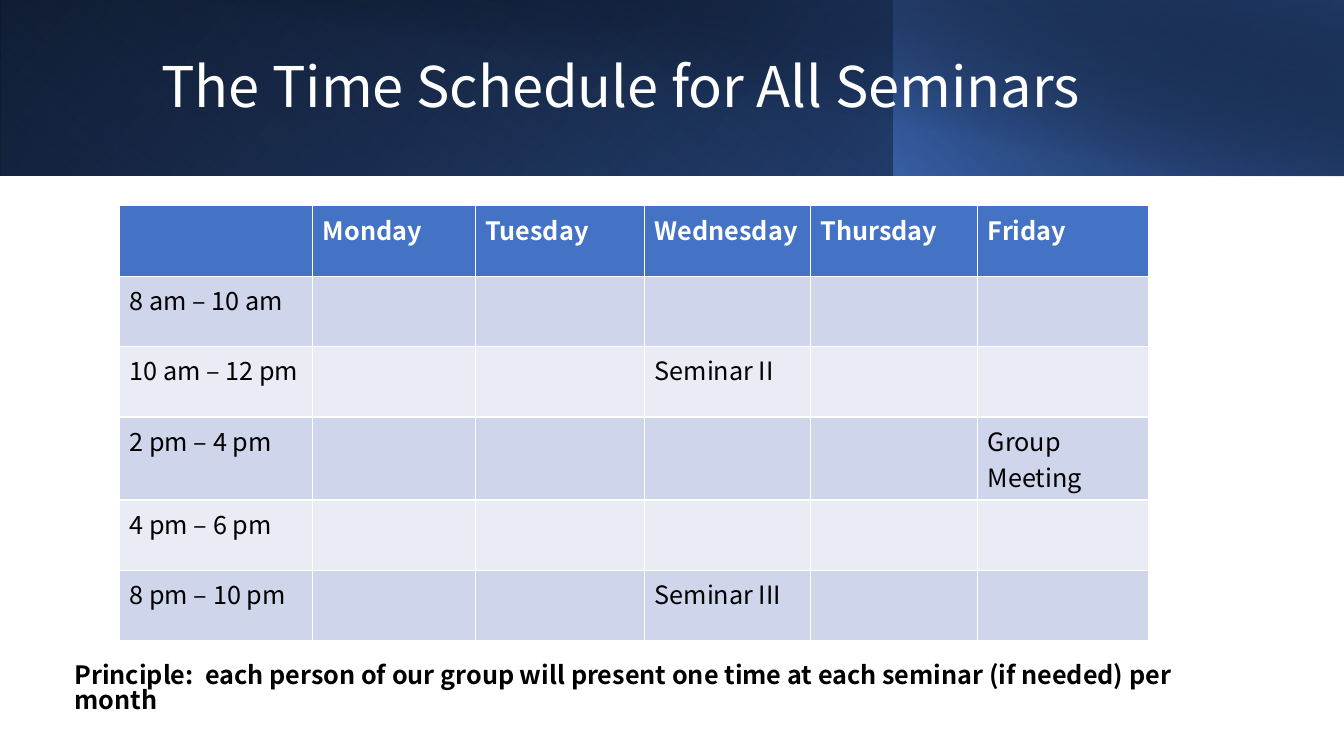
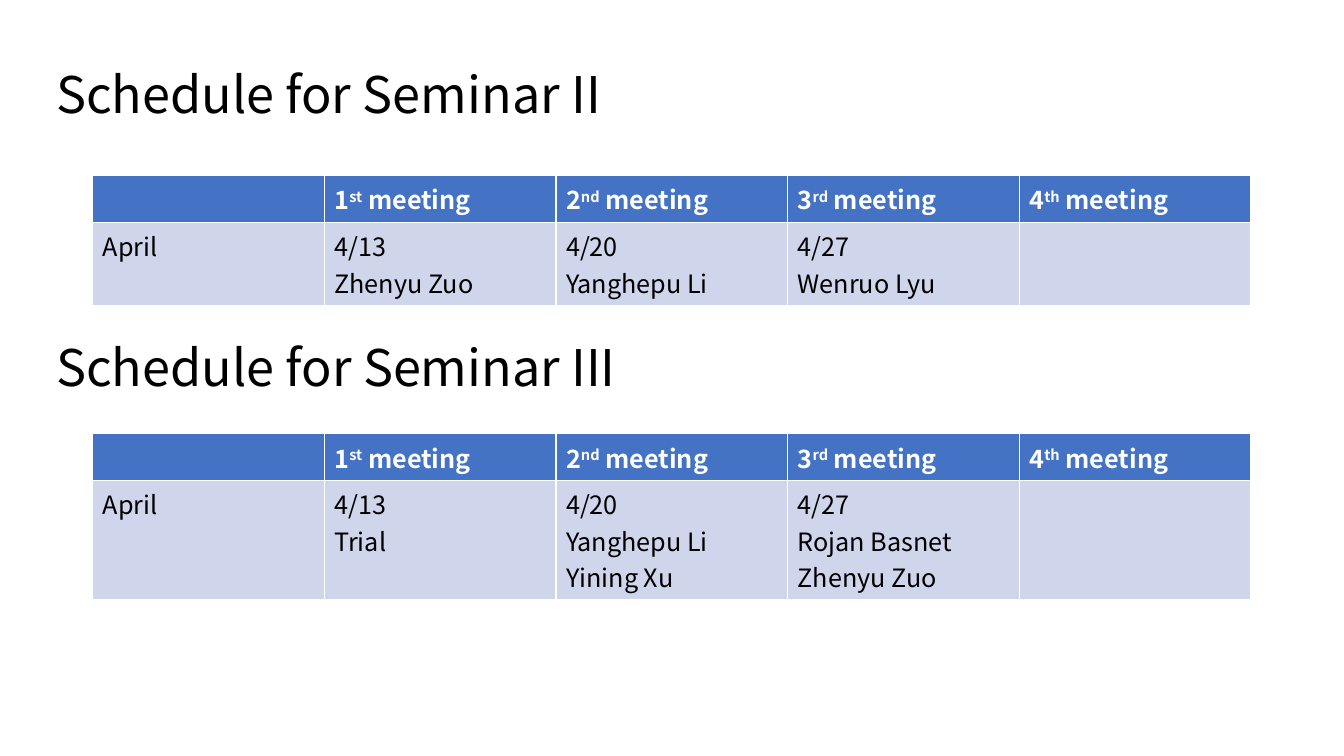
from dataclasses import dataclass
from typing import NamedTuple

from lxml.etree import SubElement
from pptx import Presentation
from pptx.dml.color import RGBColor
from pptx.enum.shapes import MSO_SHAPE
from pptx.enum.text import MSO_ANCHOR, MSO_AUTO_SIZE, PP_ALIGN
from pptx.oxml.ns import qn
from pptx.shapes.base import BaseShape
from pptx.slide import Slide
from pptx.text.text import _Paragraph
from pptx.util import Pt


# Theme: colours, font and type sizes
@dataclass(frozen=True)
class Theme:
    font: str = "Noto Sans CJK SC"
    white: str = "FFFFFF"
    black: str = "000000"
    accent: str = "4472C4"
    accent_dark: str = "2F5597"
    navy: str = "203864"
    band_odd: str = "CFD5EA"
    band_even: str = "E9EBF5"
    title: float = 40
    heading: float = 36
    text: float = 18
    title_spacing: float = 0.9
    note_spacing: float = 0.82


THEME = Theme()
TITLE_ONLY = 5


class Box(NamedTuple):
    left: float
    top: float
    width: float
    height: float


class Stop(NamedTuple):
    position: float
    color: str
    opacity: int = 100


class Band(NamedTuple):
    box: Box
    clockwise_angle: float
    stops: tuple[Stop, Stop]
    flipped: bool = True
    rotation: float = 0


class Ordinal(NamedTuple):
    number: str
    suffix: str


@dataclass(frozen=True)
class Schedule:
    left: float
    top: float
    columns: list[float]
    row_height: float
    rows: list[list[str | Ordinal]]


# Content
HEADER_BANDS = [
    Band(Box(0, 0, 960, 125.5), 140,
         (Stop(0, THEME.black), Stop(1, THEME.accent_dark))),
    Band(Box(0, 0, 639, 125.5), 230,
         (Stop(0.2, THEME.accent, 0), Stop(1, THEME.navy, 55)), rotation=180),
    Band(Box(638.5, 0, 321.5, 125.5), 220,
         (Stop(0, THEME.accent, 66), Stop(1, THEME.black, 30))),
    Band(Box(36, 0, 924, 126), 280,
         (Stop(0.5, THEME.black, 0), Stop(0.99, THEME.navy, 52)), flipped=False),
]

WEEK = Schedule(85.5, 147, [138, 116, 121, 118.5, 119.5, 122], 50.3, [
    ["", "Monday", "Tuesday", "Wednesday", "Thursday", "Friday"],
    ["8 am – 10 am", "", "", "", "", ""],
    ["10 am – 12 pm", "", "", "Seminar II", "", ""],
    ["2 pm – 4 pm", "", "", "", "", "Group Meeting"],
    ["4 pm – 6 pm", "", "", "", "", ""],
    ["8 pm – 10 pm", "", "", "Seminar III", "", ""],
])

MEETINGS = ["", Ordinal("1", "st"), Ordinal("2", "nd"), Ordinal("3", "rd"), Ordinal("4", "th")]


def seminar_schedule(top: float, april: list[str]) -> Schedule:
    return Schedule(66.2, top, [165.5] * 5, 29.2, [MEETINGS, ["April", *april]])


SEMINAR_II = seminar_schedule(
    125.5, ["4/13\nZhenyu Zuo", "4/20\nYanghepu Li", "4/27\nWenruo Lyu", ""])
SEMINAR_III = seminar_schedule(
    309.8, ["4/13\nTrial", "4/20\nYanghepu Li\nYining Xu", "4/27\nRojan Basnet\nZhenyu Zuo", ""])


# Drawing functions
def style_paragraph(p: _Paragraph, size: float, color: str, bold: bool = False) -> None:
    p.font.name = THEME.font
    p.font.size = Pt(size)
    p.font.bold = bold
    p.font.color.rgb = RGBColor.from_string(color)


def place(sp: BaseShape, box: Box) -> None:
    sp.left, sp.top, sp.width, sp.height = (Pt(v) for v in box)


def set_heading(sp: BaseShape, box: Box, text: str, size: float, color: str) -> None:
    place(sp, box)
    tf = sp.text_frame
    tf.word_wrap = True
    tf.auto_size = MSO_AUTO_SIZE.NONE
    tf.vertical_anchor = MSO_ANCHOR.MIDDLE
    tf.text = text
    p = tf.paragraphs[0]
    p.alignment = PP_ALIGN.LEFT
    p.line_spacing = THEME.title_spacing
    style_paragraph(p, size, color)


def add_band(slide: Slide, band: Band) -> None:
    sp = slide.shapes.add_shape(MSO_SHAPE.RECTANGLE, *(Pt(v) for v in band.box))
    sp.shadow.inherit = False
    sp.line.fill.background()
    sp.rotation = band.rotation
    if band.flipped:
        sp._element.spPr.xfrm.set("flipH", "1")
    sp.fill.gradient()
    sp.fill.gradient_angle = 360 - band.clockwise_angle
    for gradient_stop, stop in zip(sp.fill.gradient_stops, band.stops):
        gradient_stop.position = stop.position
        gradient_stop.color.rgb = RGBColor.from_string(stop.color)
    for color, stop in zip(sp._element.spPr.iter(qn("a:srgbClr")), band.stops):
        if stop.opacity < 100:
            SubElement(color, qn("a:alpha")).set("val", str(stop.opacity * 1000))


def add_ordinal(p: _Paragraph, ordinal: Ordinal) -> None:
    for text, baseline in ((ordinal.number, 0), (ordinal.suffix, 30000), (" meeting", 0)):
        r = p.add_run()
        r.text = text
        if baseline:
            r.font._element.set("baseline", str(baseline))


def add_schedule(slide: Slide, schedule: Schedule) -> None:
    n_rows, n_cols = len(schedule.rows), len(schedule.columns)
    table = slide.shapes.add_table(
        n_rows, n_cols, Pt(schedule.left), Pt(schedule.top),
        Pt(sum(schedule.columns)), Pt(schedule.row_height * n_rows)).table
    for column, width in zip(table.columns, schedule.columns):
        column.width = Pt(width)
    for i, values in enumerate(schedule.rows):
        table.rows[i].height = Pt(schedule.row_height)
        header = i == 0
        fill = THEME.accent if header else THEME.band_odd if i % 2 else THEME.band_even
        for j, value in enumerate(values):
            cell = table.cell(i, j)
            cell.fill.solid()
            cell.fill.fore_color.rgb = RGBColor.from_string(fill)
            if isinstance(value, Ordinal):
                add_ordinal(cell.text_frame.paragraphs[0], value)
            else:
                cell.text = value
            for p in cell.text_frame.paragraphs:
                style_paragraph(p, THEME.text, THEME.white if header else THEME.black, header)


def add_note(slide: Slide, box: Box, text: str) -> None:
    tf = slide.shapes.add_textbox(*(Pt(v) for v in box)).text_frame
    tf.word_wrap = True
    tf.text = text
    p = tf.paragraphs[0]
    p.line_spacing = THEME.note_spacing
    style_paragraph(p, THEME.text, THEME.black, bold=True)


# Slides
def build_week_slide(prs: Presentation) -> None:
    slide = prs.slides.add_slide(prs.slide_layouts[TITLE_ONLY])
    for band in HEADER_BANDS:
        add_band(slide, band)
    title = slide.shapes.title
    set_heading(title, Box(108, 23, 779, 81.4), "The Time Schedule for All Seminars",
                THEME.title, THEME.white)
    slide.shapes._spTree.append(title._element)  # bring the title in front of the bands
    add_schedule(slide, WEEK)
    add_note(slide, Box(46, 471, 820, 29),
             "Principle:  each person of our group will present one time "
             "at each seminar (if needed) per month")


def build_seminar_slide(prs: Presentation) -> None:
    slide = prs.slides.add_slide(prs.slide_layouts[TITLE_ONLY])
    upper, lower = Box(33, 17.3, 828, 104.4), Box(33, 212.4, 828, 104.4)
    set_heading(slide.shapes.title, lower, "Schedule for Seminar III",
                THEME.heading, THEME.black)
    add_schedule(slide, SEMINAR_II)
    heading = slide.shapes.add_textbox(*(Pt(v) for v in upper))
    set_heading(heading, upper, "Schedule for Seminar II", THEME.heading, THEME.black)
    add_schedule(slide, SEMINAR_III)


def main() -> None:
    prs = Presentation()
    prs.slide_width, prs.slide_height = Pt(960), Pt(540)
    build_week_slide(prs)
    build_seminar_slide(prs)
    prs.save("out.pptx")


if __name__ == "__main__":
    main()
